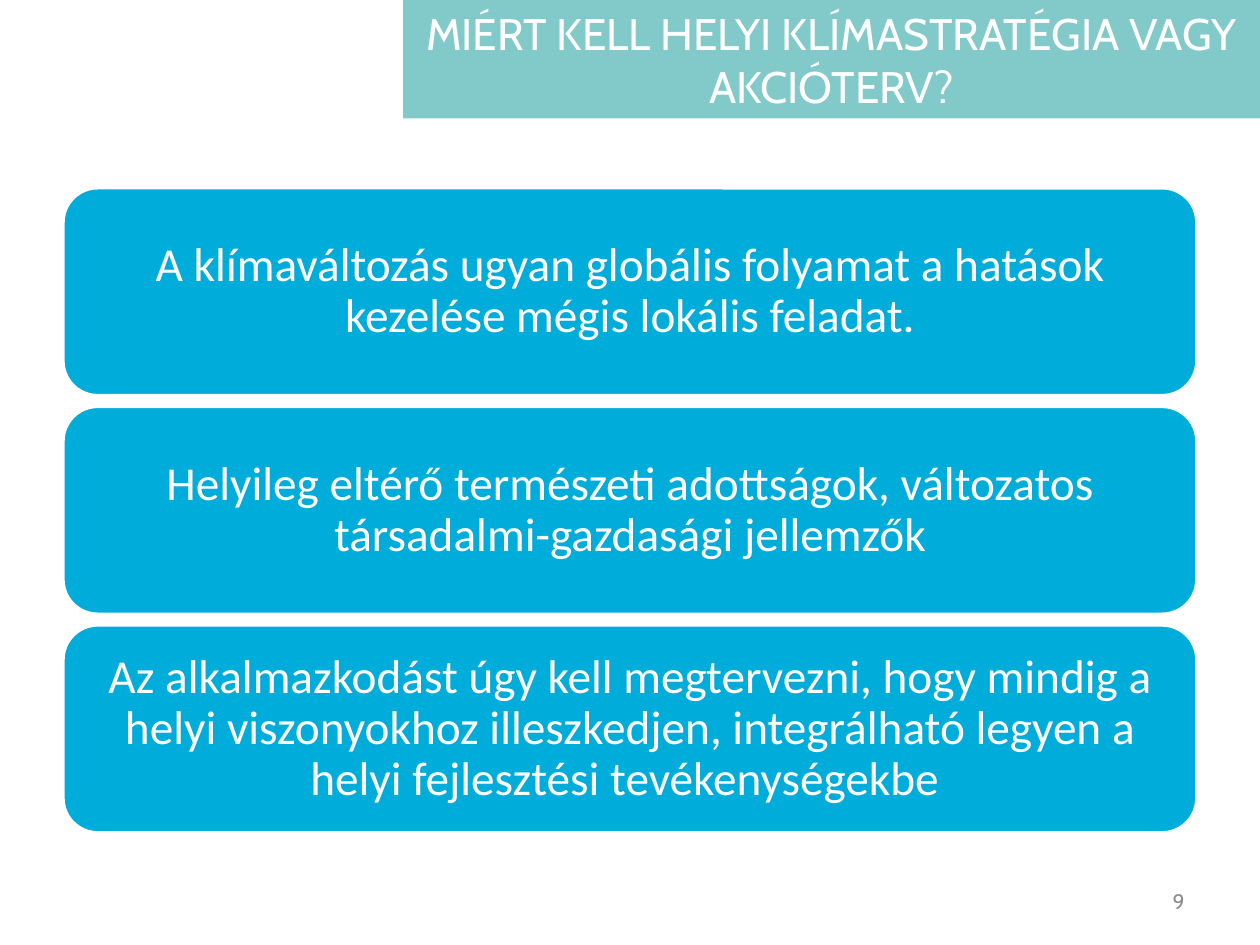
from pptx import Presentation
from pptx.dml.color import RGBColor
from pptx.enum.shapes import MSO_SHAPE as Shape
from pptx.enum.text import MSO_ANCHOR as Anchor, PP_ALIGN as Align
from pptx.util import Inches, Pt

TITLE = "MIÉRT KELL HELYI KLÍMASTRATÉGIA VAGY AKCIÓTERV?"
REASONS = [
    "A klímaváltozás ugyan globális folyamat a hatások kezelése mégis lokális feladat.",
    "Helyileg eltérő természeti adottságok, változatos társadalmi-gazdasági jellemzők",
    "Az alkalmazkodást úgy kell megtervezni, hogy mindig a helyi viszonyokhoz "
    "illeszkedjen, integrálható legyen a helyi fejlesztési tevékenységekbe ",
]
PAGE_NUMBER = "9"

TEAL = RGBColor(0x81, 0xCA, 0xC9)
BLUE = RGBColor(0x00, 0xAD, 0xDA)
WHITE = RGBColor(0xFF, 0xFF, 0xFF)
GREY = RGBColor(0x8C, 0x8C, 0x8C)

WIDTH, HEIGHT = 10, 7.5
MARGIN = 0.05 * WIDTH
BAND_LEFT, BAND_HEIGHT = 0.32 * WIDTH, 0.94
CARD_TOP, CARD_HEIGHT, CARD_PITCH = 1.49, 1.65, 1.735
CARD_INSET = 0.19


def write(shape, text, font_name, size, color, align):
    frame = shape.text_frame
    frame.word_wrap = True
    frame.vertical_anchor = Anchor.MIDDLE
    paragraph = frame.paragraphs[0]
    paragraph.text = text
    paragraph.alignment = align
    font = paragraph.font
    font.name, font.size, font.color.rgb = font_name, Pt(size), color
    return paragraph


def add_panel(slide, kind, left, top, width, height, fill):
    panel = slide.shapes.add_shape(
        kind, Inches(left), Inches(top), Inches(width), Inches(height))
    panel.shadow.inherit = False
    panel.fill.solid()
    panel.fill.fore_color.rgb = fill
    panel.line.fill.background()
    return panel


def add_card(slide, row, reason):
    card = add_panel(slide, Shape.ROUNDED_RECTANGLE, MARGIN,
                     CARD_TOP + row * CARD_PITCH, WIDTH - 2 * MARGIN, CARD_HEIGHT, BLUE)
    card.line.color.rgb = WHITE
    card.line.width = Pt(2)
    frame = card.text_frame
    # The rounded corners already add to the inset of the text.
    corner = card.adjustments[0] * CARD_HEIGHT * 0.29
    inset = Inches(CARD_INSET - corner)
    frame.margin_left = frame.margin_right = inset
    frame.margin_top = frame.margin_bottom = inset
    write(card, reason, "Calibri", 27, WHITE, Align.CENTER).line_spacing = 0.9


def main():
    deck = Presentation()
    deck.slide_width, deck.slide_height = Inches(WIDTH), Inches(HEIGHT)
    slide = deck.slides.add_slide(deck.slide_layouts[6])

    band = add_panel(slide, Shape.RECTANGLE, BAND_LEFT, 0,
                     WIDTH - BAND_LEFT, BAND_HEIGHT, TEAL)
    write(band, TITLE, "Cabin", 25.2, WHITE, Align.CENTER)

    for row, reason in enumerate(REASONS):
        add_card(slide, row, reason)

    number_width = 2.33
    number = slide.shapes.add_textbox(
        Inches(WIDTH - MARGIN - number_width), Inches(6.95),
        Inches(number_width), Inches(0.4))
    write(number, PAGE_NUMBER, "Cabin", 12, GREY, Align.RIGHT)

    deck.save("out.pptx")


if __name__ == "__main__":
    main()
